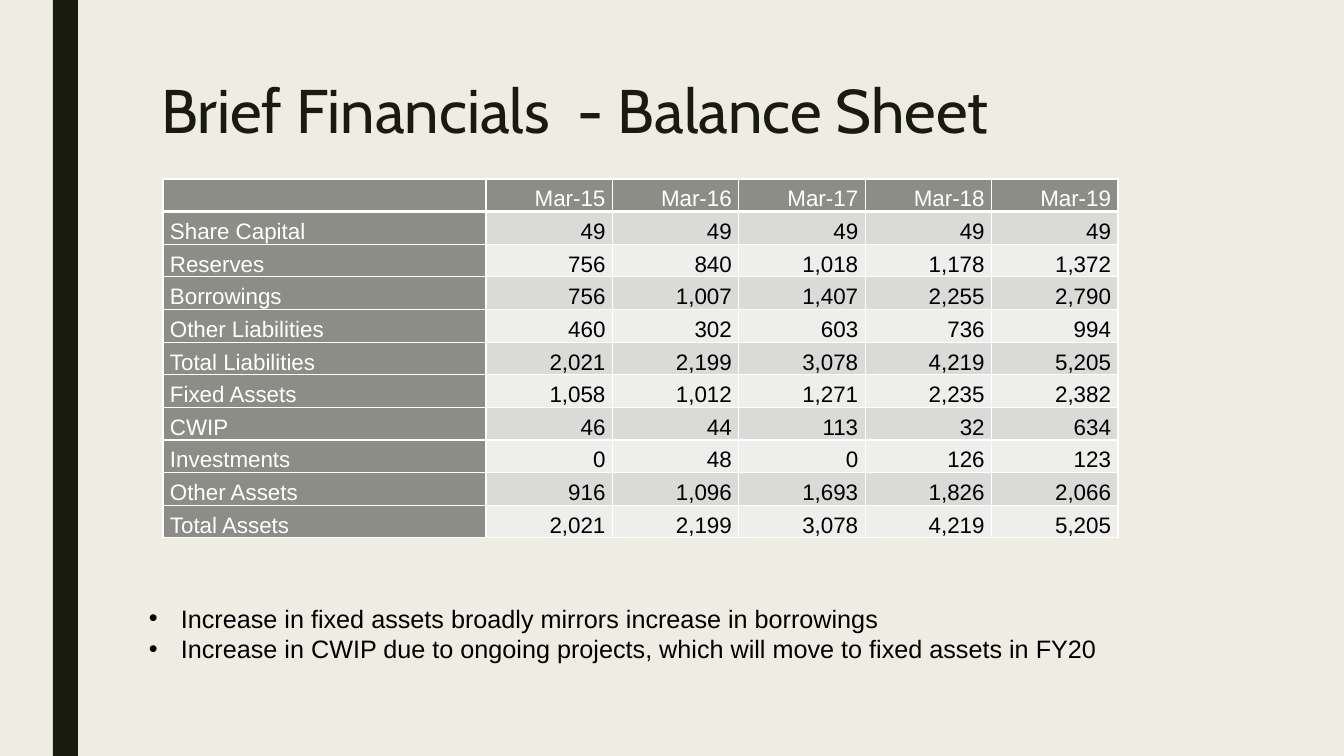
from lxml.etree import SubElement
from pptx import Presentation
from pptx.dml.color import RGBColor
from pptx.enum.shapes import MSO_SHAPE as Shape
from pptx.enum.text import MSO_ANCHOR as Anchor, MSO_AUTO_SIZE as AutoSize, PP_ALIGN as Align
from pptx.oxml.ns import qn
from pptx.util import Pt

PX = 12192000 / 1344
COLORS = {
    "background": "EFEDE3", "dark": "191B0E", "header": "8C8D86",
    "odd": "DADBD9", "even": "EEEEED", "white": "FFFFFF", "black": "000000",
}


def px(*lengths):
    scaled = [round(length * PX) for length in lengths]
    return scaled if len(scaled) > 1 else scaled[0]


def style(paragraph, face, size, color, align):
    paragraph.alignment = align
    paragraph.font.name = face
    paragraph.font.size = Pt(size)
    paragraph.font.bold = False
    paragraph.font.color.rgb = RGBColor.from_string(COLORS[color])


deck = Presentation()
deck.slide_width, deck.slide_height = px(1344, 756)
slide = deck.slides.add_slide(deck.slide_layouts[5])
slide.background.fill.solid()
slide.background.fill.fore_color.rgb = RGBColor.from_string(COLORS["background"])

# Side bar
side_bar = slide.shapes.add_shape(Shape.RECTANGLE, *px(53, 0, 25, 756))
side_bar.shadow.inherit = False
side_bar.fill.solid()
side_bar.fill.fore_color.rgb = RGBColor.from_string(COLORS["dark"])
side_bar.line.fill.background()

# Title
title = slide.shapes.title
title.left, title.top, title.width, title.height = px(151, 76, 1131, 101)
title.text_frame.text = "Brief Financials  - Balance Sheet"
title.text_frame.vertical_anchor = Anchor.TOP
title.text_frame.auto_size = AutoSize.NONE
heading = title.text_frame.paragraphs[0]
heading.line_spacing = 0.89
style(heading, "Cabin", 44, "dark", Align.JUSTIFY)

# Balance sheet
balance_sheet = [
    ("", "Mar-15", "Mar-16", "Mar-17", "Mar-18", "Mar-19"),
    ("Share Capital", "49", "49", "49", "49", "49"),
    ("Reserves", "756", "840", "1,018", "1,178", "1,372"),
    ("Borrowings", "756", "1,007", "1,407", "2,255", "2,790"),
    ("Other Liabilities", "460", "302", "603", "736", "994"),
    ("Total Liabilities", "2,021", "2,199", "3,078", "4,219", "5,205"),
    ("Fixed Assets", "1,058", "1,012", "1,271", "2,235", "2,382"),
    ("CWIP", "46", "44", "113", "32", "634"),
    ("Investments", "0", "48", "0", "126", "123"),
    ("Other Assets", "916", "1,096", "1,693", "1,826", "2,066"),
    ("Total Assets", "2,021", "2,199", "3,078", "4,219", "5,205"),
]
row_count, column_count = len(balance_sheet), len(balance_sheet[0])
table = slide.shapes.add_table(row_count, column_count, *px(163, 179, 955, 359)).table
table.first_row = table.horz_banding = False
for row in table.rows:
    row.height = px(359) // row_count
for c, column in enumerate(table.columns):
    column.width = px(632) // (column_count - 1) if c else px(323)

for r, entries in enumerate(balance_sheet):
    for c, entry in enumerate(entries):
        cell = table.cell(r, c)
        cell.text = entry
        cell.vertical_anchor = Anchor.BOTTOM
        cell.margin_left = cell.margin_right = px(7)
        cell.margin_top = cell.margin_bottom = 0
        is_heading = r == 0 or c == 0
        style(cell.text_frame.paragraphs[0], "Arial", 16,
              "white" if is_heading else "black", Align.RIGHT if c else Align.LEFT)

        # Cell borders, with a heavy rule under the header row
        for side in ("lnL", "lnR", "lnT", "lnB"):
            heavy = (r, side) in ((0, "lnB"), (1, "lnT"))
            border = SubElement(cell._tc.get_or_add_tcPr(), qn(f"a:{side}"),
                                w=str(Pt(3 if heavy else 1)))
            SubElement(SubElement(border, qn("a:solidFill")), qn("a:srgbClr"),
                       val=COLORS["white"])
        band = "header" if is_heading else "odd" if r % 2 else "even"
        cell.fill.solid()
        cell.fill.fore_color.rgb = RGBColor.from_string(COLORS[band])

# Remarks
remarks = slide.shapes.add_textbox(*px(139, 598, 978, 71)).text_frame
remarks.word_wrap = True
remarks.auto_size = AutoSize.SHAPE_TO_FIT_TEXT
remarks.text = "\n".join([
    "Increase in fixed assets broadly mirrors increase in borrowings",
    "Increase in CWIP due to ongoing projects, which will move to fixed assets in FY20",
])
for remark in remarks.paragraphs:
    indents = remark._p.get_or_add_pPr()
    indents.set("marL", str(px(32)))
    indents.set("indent", str(px(-32)))
    SubElement(indents, qn("a:buFont"), typeface="Arial")
    SubElement(indents, qn("a:buChar"), char="•")
    style(remark, "Arial", 18, "black", Align.JUSTIFY)

deck.save("out.pptx")
